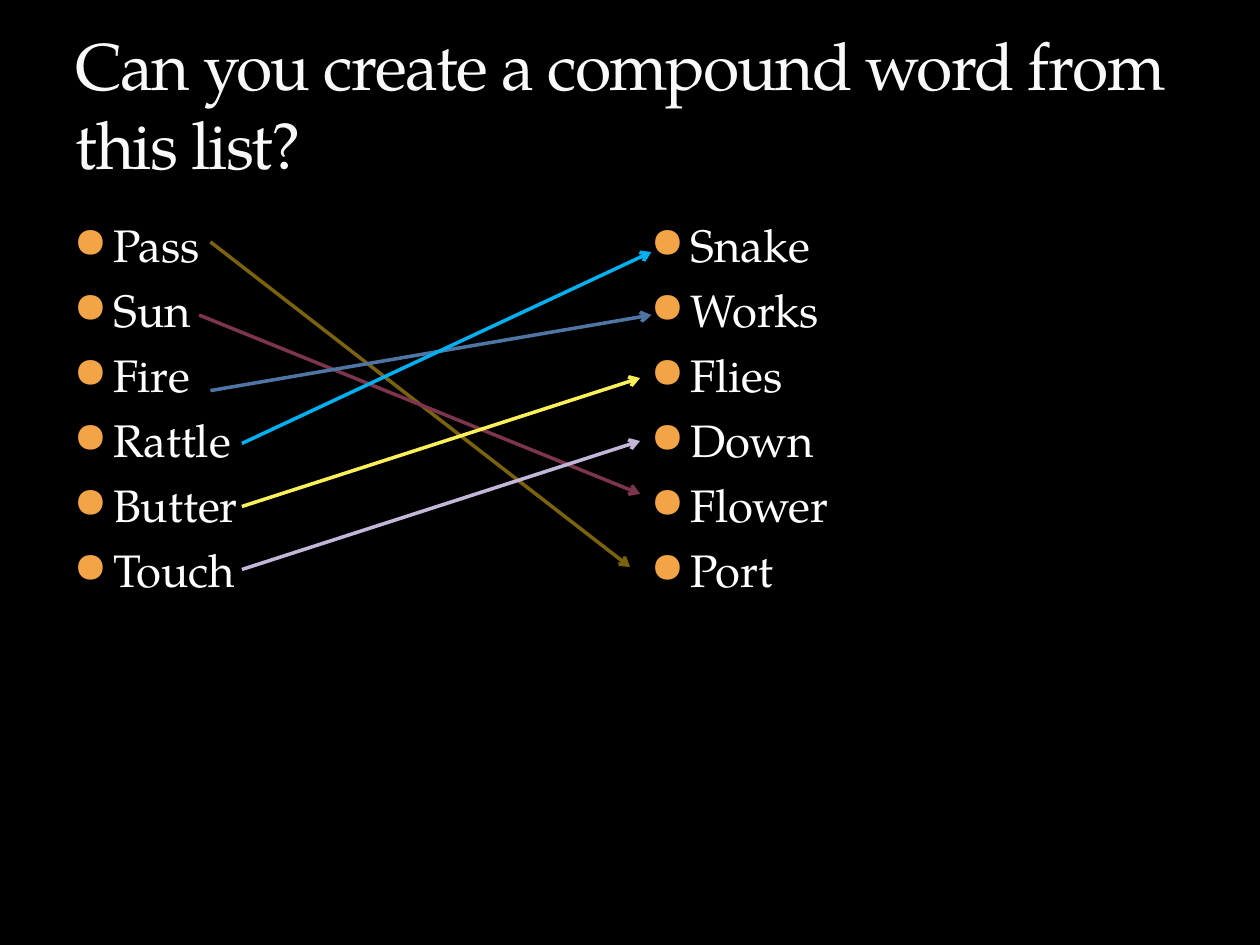
from lxml.etree import SubElement
from pptx import Presentation
from pptx.dml.color import RGBColor
from pptx.enum.shapes import MSO_CONNECTOR
from pptx.enum.text import MSO_ANCHOR
from pptx.oxml.ns import qn
from pptx.util import Inches, Pt

FONT = "TeX Gyre Pagella"
FIRST_WORDS = ["Pass", "Sun", "Fire", "Rattle", "Butter", "Touch"]
SECOND_WORDS = ["Snake", "Works", "Flies", "Down", "Flower", "Port"]
MATCHES = [
    ((1.67, 1.92), (5, 4.5), "7A620E"),
    ((1.58, 2.5), (5.08, 3.92), "7C354D"),
    ((1.67, 3.1), (5.17, 2.5), "4E75A3"),
    ((1.92, 3.52), (5.17, 2), "00B0F0"),
    ((1.92, 4.02), (5.08, 3), "FCF059"),
    ((1.92, 4.52), (5.08, 3.5), "C4B6D9"),
]


def rgb(value):
    """Turn a hex string into a colour."""
    return RGBColor.from_string(value)


def add_frame(s, left, top, width, height):
    """Add a wrapping text box and return its text frame."""
    box = s.shapes.add_textbox(Inches(left), Inches(top), Inches(width), Inches(height))
    box.text_frame.word_wrap = True
    return box.text_frame


def add_run(p, text, size, color):
    """Add a styled run to a paragraph."""
    r = p.add_run()
    r.text = text
    r.font.name = FONT
    r.font.size = Pt(size)
    r.font.color.rgb = rgb(color)
    return r


def add_title(s, text):
    """Add the bottom-anchored title with tightened letters."""
    tf = add_frame(s, 0.5, 0.17, 9, 1.33)
    tf.vertical_anchor = MSO_ANCHOR.BOTTOM
    r = add_run(tf.paragraphs[0], text, 37.8, "F9F9F9")
    r.font._element.set("spc", "-100")


def add_bullet(p, color):
    """Give a paragraph a hanging round bullet."""
    pPr = p._p.get_or_add_pPr()
    pPr.set("marL", str(Inches(0.3)))
    pPr.set("indent", str(-Inches(0.3)))
    clr = SubElement(pPr, qn("a:buClr"))
    SubElement(clr, qn("a:srgbClr"), val=color)
    SubElement(pPr, qn("a:buSzPct"), val="85000")
    SubElement(pPr, qn("a:buFont"), typeface=FONT)
    SubElement(pPr, qn("a:buChar"), char="●")


def add_word_list(s, left, words):
    """Add one column of bulleted words."""
    tf = add_frame(s, left, 1.67, 4.44, 5)
    for i, word in enumerate(words):
        p = tf.add_paragraph() if i else tf.paragraphs[0]
        p.space_before = Pt(6)
        add_bullet(p, "F3A447")
        add_run(p, word, 26, "FFFFFF")


def add_arrow(s, start, end, color):
    """Add an arrow joining two halves of a compound word."""
    line = s.shapes.add_connector(
        MSO_CONNECTOR.STRAIGHT, *(Inches(v) for v in (*start, *end))
    )
    line.line.color.rgb = rgb(color)
    line.line.width = Pt(2)
    SubElement(line.line._get_or_add_ln(), qn("a:tailEnd"), type="arrow")
    SubElement(line._element.spPr, qn("a:effectLst"))


def main():
    """Build the compound word slide."""
    prs = Presentation()
    prs.slide_width, prs.slide_height = Inches(10), Inches(7.5)
    s = prs.slides.add_slide(prs.slide_layouts[6])
    s.background.fill.solid()
    s.background.fill.fore_color.rgb = rgb("000000")
    add_title(s, "Can you create a compound word from this list?")
    add_word_list(s, 0.5, FIRST_WORDS)
    add_word_list(s, 5.08, SECOND_WORDS)
    for start, end, color in MATCHES:
        add_arrow(s, start, end, color)
    prs.save("out.pptx")


if __name__ == "__main__":
    main()
